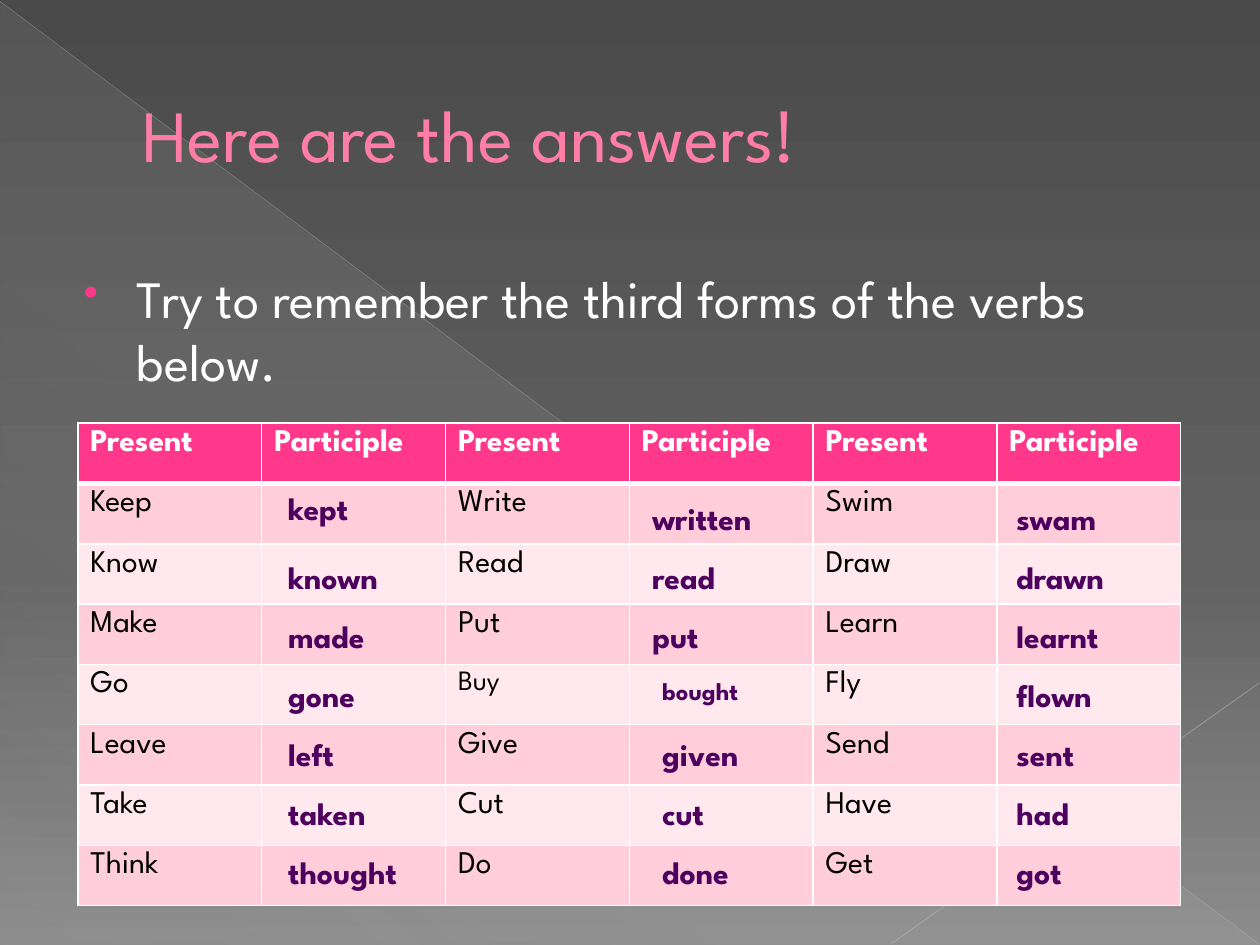
from dataclasses import dataclass

from lxml import etree
from pptx import Presentation
from pptx.dml.color import RGBColor
from pptx.enum.shapes import MSO_CONNECTOR, MSO_SHAPE
from pptx.enum.text import MSO_ANCHOR, MSO_AUTO_SIZE
from pptx.oxml.ns import qn
from pptx.util import Cm, Pt

TRIANGLE = MSO_SHAPE.RIGHT_TRIANGLE
STRAIGHT = MSO_CONNECTOR.STRAIGHT
TOP, MIDDLE = MSO_ANCHOR.TOP, MSO_ANCHOR.MIDDLE
GROW = MSO_AUTO_SIZE.SHAPE_TO_FIT_TEXT


@dataclass(frozen=True)
class Theme:
    """Colours, font and type sizes of the slide."""
    font: str = "League Spartan"
    title: str = "FF7DA7"
    title_edge: str = "B12761"
    accent: str = "FF388C"
    light: str = "FFFFFF"
    dark: str = "000000"
    answer: str = "4E005F"
    bands: tuple = ("FFCEDA", "FFE8EE")
    backdrop: tuple = ((0, "4A4A4A", 100), (60, "626262", 100), (100, "8C8C8C", 100))
    sheen: tuple = ((0, "D2D2D2", 10), (70, "D2D2D2", 8), (100, "D2D2D2", 1))
    title_size: float = 42
    body_size: float = 30
    table_size: float = 18
    verb_small: float = 16
    answer_small: float = 14


THEME = Theme()
VERBS = [
    ("Keep", "Write", "Swim"),
    ("Know", "Read", "Draw"),
    ("Make", "Put", "Learn"),
    ("Go", "Buy", "Fly"),
    ("Leave", "Give", "Send"),
    ("Take", "Cut", "Have"),
    ("Think", "Do", "Get"),
]
ANSWERS = [
    ("kept", "written", "swam"),
    ("known", "read", "drawn"),
    ("made", "put", "learnt"),
    ("gone", "bought", "flown"),
    ("left", "given", "sent"),
    ("taken", "cut", "had"),
    ("thought", "done", "got"),
]


def add_node(parent, tag, **attributes):
    """Append a DrawingML element and return it."""
    values = {name: str(value) for name, value in attributes.items()}
    return etree.SubElement(parent, qn(f"a:{tag}"), values)


def add_color(parent, color, opacity=100):
    """Append a colour with its opacity in percent."""
    node = add_node(parent, "srgbClr", val=color)
    if opacity < 100:
        add_node(node, "alpha", val=opacity * 1000)


def set_gradient(fill, element, stops, angle):
    """Give a fill a linear gradient, with the angle measured clockwise."""
    fill.gradient()
    fill.gradient_angle = 360 - angle
    stop_list = next(element.iter(qn("a:gsLst")))
    for stop in list(stop_list):
        stop_list.remove(stop)
    for position, color, opacity in stops:
        add_color(add_node(stop_list, "gs", pos=position * 1000), color, opacity)


def write_text(frame, text, *, size, color, bold=False, indent=0, hanging=0,
               before=0, bullet=None, edge=None):
    """Write one formatted paragraph into a text frame."""
    para = frame.paragraphs[0]
    para.space_before = Pt(before)
    properties = para._p.get_or_add_pPr()
    properties.set("marL", str(Cm(indent)))
    properties.set("indent", str(Cm(-hanging)))
    if bullet:
        add_color(add_node(properties, "buClr"), bullet)
        add_node(properties, "buSzPct", val=80000)
        add_node(properties, "buChar", char="•")
    span = para.add_run()
    span.text = text
    if edge:
        outline = add_node(span._r.get_or_add_rPr(), "ln", w=Pt(0.5))
        add_color(add_node(outline, "solidFill"), edge)
    span.font.name = THEME.font
    span.font.size = Pt(size)
    span.font.bold = bold
    span.font.color.rgb = RGBColor.from_string(color)


def add_frame(page, left, top, width, height, anchor=TOP):
    """Add a wrapping text box and return its text frame."""
    frame = page.shapes.add_textbox(Cm(left), Cm(top), Cm(width), Cm(height)).text_frame
    frame.word_wrap = True
    frame.vertical_anchor = anchor
    return frame


def add_ray(page, start, end, color, width, opacity):
    """Draw a thin translucent line."""
    ray = page.shapes.add_connector(STRAIGHT, *map(Cm, start + end))
    ray.line.width = Pt(width)
    ray.line.color.rgb = RGBColor.from_string(color)
    shade = next(ray.element.iter(qn("a:srgbClr")))
    add_node(shade, "alpha", val=opacity * 1000)
    add_node(ray.element.spPr, "effectLst")


def draw_backdrop(page, left, top, width, height):
    """Draw the grey background, its sheen and its rays."""
    set_gradient(page.background.fill, page.element, THEME.backdrop, 90)
    sheen = page.shapes.add_shape(TRIANGLE, Cm(left), Cm(top), Cm(width), Cm(height))
    sheen.shadow.inherit = False
    sheen.line.fill.background()
    set_gradient(sheen.fill, sheen.element, THEME.sheen, 133)
    right, bottom = left + width, top + height
    add_ray(page, (left, top), (right, bottom), "BFBFBF", 0.39, 35)
    add_ray(page, (right, top + 13.74), (left + 17.96, bottom), "C6C6C6", 0.47, 45)


def draw_heading(page, left, top, width, height):
    """Place the title and the instruction below it."""
    title = add_frame(page, left, top, width, 3.89, MIDDLE)
    write_text(title, "Here are the answers!", size=THEME.title_size,
               color=THEME.title, indent=1.35, edge=THEME.title_edge)
    body = add_frame(page, left, top + 4.5, width, height - 4.5)
    write_text(body, "Try to remember the third forms of the verbs below.",
               size=THEME.body_size, color=THEME.light, indent=1.24,
               hanging=1.07, before=6, bullet=THEME.accent)


def style_cell(cell, color, bottom_width):
    """Fill a cell and draw its white borders."""
    properties = cell._tc.get_or_add_tcPr()
    for side in "LRTB":
        width = bottom_width if side == "B" else 1
        border = add_node(properties, f"ln{side}", w=Pt(width))
        add_color(add_node(border, "solidFill"), THEME.light)
    cell.fill.solid()
    cell.fill.fore_color.rgb = RGBColor.from_string(color)


def draw_verb_table(page, left, top, width, height):
    """Build the table of verbs with empty participle columns."""
    rows = [("Present", "Participle") * 3]
    rows += [tuple(text for verb in verbs for text in (verb, "")) for verbs in VERBS]
    table = page.shapes.add_table(len(rows), len(rows[0]), Cm(left), Cm(top),
                                  Cm(width), Cm(height)).table
    for row, texts in enumerate(rows):
        header = row == 0
        fill = THEME.accent if header else THEME.bands[(row - 1) % 2]
        for column, text in enumerate(texts):
            cell = table.cell(row, column)
            style_cell(cell, fill, 3 if header else 1)
            if text:
                write_text(cell.text_frame, text, bold=header,
                           size=THEME.verb_small if text == "Buy" else THEME.table_size,
                           color=THEME.light if header else THEME.dark)


def draw_answers(page, left, top, width, height):
    """Lay the participles over the table's empty columns."""
    column_step, row_step = width / 3, height / len(ANSWERS)
    for row, answers in enumerate(ANSWERS):
        for column, text in enumerate(answers):
            shift = 0.2 if column == 1 and row >= 3 else 0
            lift = 0.2 if text == "kept" else 0
            small = text == "bought"
            frame = add_frame(page, left + column * column_step + shift,
                              top + row * row_step - lift, 3.38, 0.86 if small else 1.02)
            frame.auto_size = GROW
            write_text(frame, text, color=THEME.answer, bold=True,
                       size=THEME.answer_small if small else THEME.table_size)


def main():
    """Build the answer slide and save it."""
    deck = Presentation()
    deck.slide_width, deck.slide_height = Cm(25.4), Cm(19.05)
    page = deck.slides.add_slide(deck.slide_layouts[6])
    draw_backdrop(page, 0, 0.03, 25.38, 19)
    draw_heading(page, 1.27, 0.74, 22.86, 17.2)
    draw_verb_table(page, 1.57, 8.53, 22.23, 9.73)
    draw_answers(page, 5.56, 9.93, 22.02, 8.33)
    deck.save("out.pptx")


if __name__ == "__main__":
    main()
